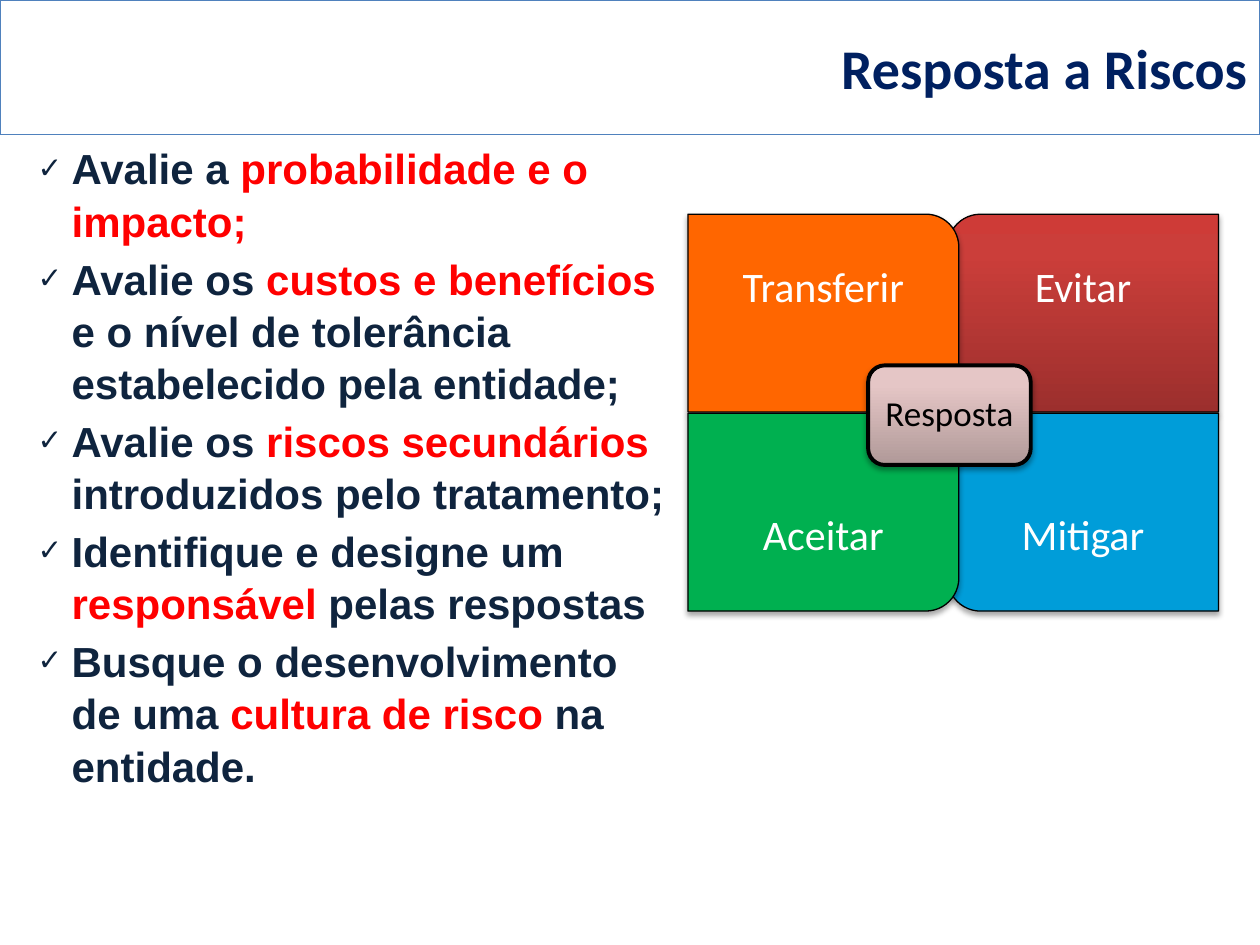
from dataclasses import dataclass
from lxml import etree
from pptx import Presentation
from pptx import util as u
from pptx.dml.color import RGBColor
from pptx.enum import shapes, text
from pptx.oxml.ns import qn

NAVY = "0F243E"
RED = "FF0000"
WHITE = "FFFFFF"
BLACK = "000000"


@dataclass
class Quadrant:
    label: str
    column: int
    row: int
    rotation: int
    fill: str | list[tuple[int, str]]


@dataclass
class Box:
    left: float
    top: float
    width: float
    height: float

    def lengths(self) -> list[u.Length]:
        return [u.Inches(n) for n in (self.left, self.top, self.width, self.height)]


QUADRANTS = [
    Quadrant("Evitar", 1, 0, 270, [(0, "9C2F2D"), (80, "CB3E3A"), (100, "CE3B37")]),
    Quadrant("Transferir", 0, 0, 0, "FF6600"),
    Quadrant("Mitigar", 1, 1, 180, "009DD9"),
    Quadrant("Aceitar", 0, 1, 90, "00B050"),
]
CENTRE_FILL = [(0, "B09998"), (80, "E5C6C6"), (100, "E6C7C6")]
BULLETS = [
    [("Avalie a ", NAVY), ("probabilidade e o impacto;", RED)],
    [("Avalie os ", NAVY), ("custos e benefícios ", RED),
     ("e o nível de tolerância estabelecido pela entidade;", NAVY)],
    [("Avalie os ", NAVY), ("riscos secundários", RED),
     (" introduzidos pelo tratamento;", NAVY)],
    [("Identifique e designe um ", NAVY), ("responsável", RED),
     (" pelas respostas", NAVY)],
    [("Busque o desenvolvimento de uma ", NAVY), ("cultura de risco ", RED),
     ("na entidade.", NAVY)],
]


def colour(value: str) -> RGBColor:
    return RGBColor.from_string(value)


def add_run(paragraph, words: str, size: int, font: str, value: str, bold: bool = False) -> None:
    run = paragraph.add_run()
    run.text = words
    run.font.size = u.Pt(size)
    run.font.name = font
    run.font.bold = bold
    run.font.color.rgb = colour(value)


def add_colour(parent, value: str):
    element = etree.SubElement(parent, qn("a:srgbClr"))
    element.set("val", value)
    return element


def set_gradient(shape, stops: list[tuple[int, str]]) -> None:
    shape.fill.gradient()
    gradient = shape._element.spPr.find(qn("a:gradFill"))
    gradient.set("rotWithShape", "0")
    stop_list = gradient.find(qn("a:gsLst"))
    for stop in list(stop_list):
        stop_list.remove(stop)
    for percent, value in stops:
        stop = etree.SubElement(stop_list, qn("a:gs"))
        stop.set("pos", str(percent * 1000))
        add_colour(stop, value)
    gradient.find(qn("a:lin")).set("ang", str(270 * 60000))


def add_shadow(shape) -> None:
    shape.shadow.inherit = False
    effects = shape._element.spPr.find(qn("a:effectLst"))
    shadow = etree.SubElement(effects, qn("a:outerShdw"))
    settings = {"blurRad": u.Pt(3.1), "dist": u.Pt(1.8), "dir": 90 * 60000, "rotWithShape": 0}
    for name, value in settings.items():
        shadow.set(name, str(value))
    alpha = etree.SubElement(add_colour(shadow, BLACK), qn("a:alpha"))
    alpha.set("val", "35000")


def add_tile(slide, preset, box: Box, fill, line_width: float, rotation: int = 0) -> None:
    shape = slide.shapes.add_shape(preset, *box.lengths())
    shape.rotation = rotation
    if isinstance(fill, str):
        shape.fill.solid()
        shape.fill.fore_color.rgb = colour(fill)
    else:
        set_gradient(shape, fill)
    shape.line.color.rgb = colour(BLACK)
    shape.line.width = u.Pt(line_width)
    add_shadow(shape)


def add_label(slide, box: Box, words: str, size: int, value: str, inset: float) -> None:
    frame = slide.shapes.add_textbox(*box.lengths()).text_frame
    frame.word_wrap = True
    frame.vertical_anchor = text.MSO_ANCHOR.MIDDLE
    frame.margin_left = frame.margin_right = u.Inches(inset)
    frame.margin_top = frame.margin_bottom = u.Inches(inset)
    paragraph = frame.paragraphs[0]
    paragraph.alignment = text.PP_ALIGN.CENTER
    paragraph.line_spacing = 0.9
    add_run(paragraph, words, size, "Calibri", value)


def add_quadrant(slide, quadrant: Quadrant) -> None:
    width, height, label_height = 2.15, 1.57, 1.18
    left = 5.46 + quadrant.column * 2.06
    top = 1.7 + quadrant.row * 1.58
    box = Box(left, top, width, height)
    if quadrant.rotation % 180:
        shift = (width - height) / 2
        box = Box(left + shift, top - shift, height, width)
    add_tile(slide, shapes.MSO_SHAPE.ROUND_1_RECTANGLE, box, quadrant.fill, 0.75,
             quadrant.rotation)
    label_top = top + quadrant.row * (height - label_height)
    add_label(slide, Box(left, label_top, width, label_height), quadrant.label, 24, WHITE, 0.19)


def add_bullets(slide) -> None:
    frame = slide.shapes.add_textbox(*Box(0.2, 1.07, 5.28, 5.04).lengths()).text_frame
    frame.word_wrap = True
    for index, runs in enumerate(BULLETS):
        paragraph = frame.add_paragraph() if index else frame.paragraphs[0]
        paragraph.line_spacing = 1.04
        if index:
            paragraph.space_before = u.Pt(3)
        properties = paragraph._p.get_or_add_pPr()
        properties.set("marL", str(u.Inches(0.27)))
        properties.set("indent", str(u.Inches(-0.27)))
        for tag, name, value in (("a:buSzPct", "val", "70000"),
                                 ("a:buFont", "typeface", "Arial"),
                                 ("a:buChar", "char", "✓")):
            etree.SubElement(properties, qn(tag)).set(name, value)
        for words, value in runs:
            add_run(paragraph, words, 24, "Arial", value, True)


def add_title(slide) -> None:
    shape = slide.shapes.add_shape(shapes.MSO_SHAPE.RECTANGLE, *Box(0, 0, 10, 1.07).lengths())
    shape.shadow.inherit = False
    shape.fill.background()
    shape.line.color.rgb = colour("4F81BD")
    shape.line.width = u.Pt(0.75)
    shape.text_frame.vertical_anchor = text.MSO_ANCHOR.MIDDLE
    paragraph = shape.text_frame.paragraphs[0]
    paragraph.alignment = text.PP_ALIGN.RIGHT
    add_run(paragraph, "Resposta a Riscos", 32, "Calibri", "002060", True)


def main() -> None:
    presentation = Presentation()
    presentation.slide_width = u.Inches(10)
    presentation.slide_height = u.Inches(7.5)
    slide = presentation.slides.add_slide(presentation.slide_layouts[6])
    add_bullets(slide)
    for quadrant in QUADRANTS:
        add_quadrant(slide, quadrant)
    add_tile(slide, shapes.MSO_SHAPE.ROUNDED_RECTANGLE, Box(6.89, 2.9, 1.29, 0.79),
             CENTRE_FILL, 2.25)
    add_label(slide, Box(6.93, 2.94, 1.21, 0.71), "Resposta", 20, BLACK, 0.08)
    add_title(slide)
    presentation.save("out.pptx")


if __name__ == "__main__":
    main()
